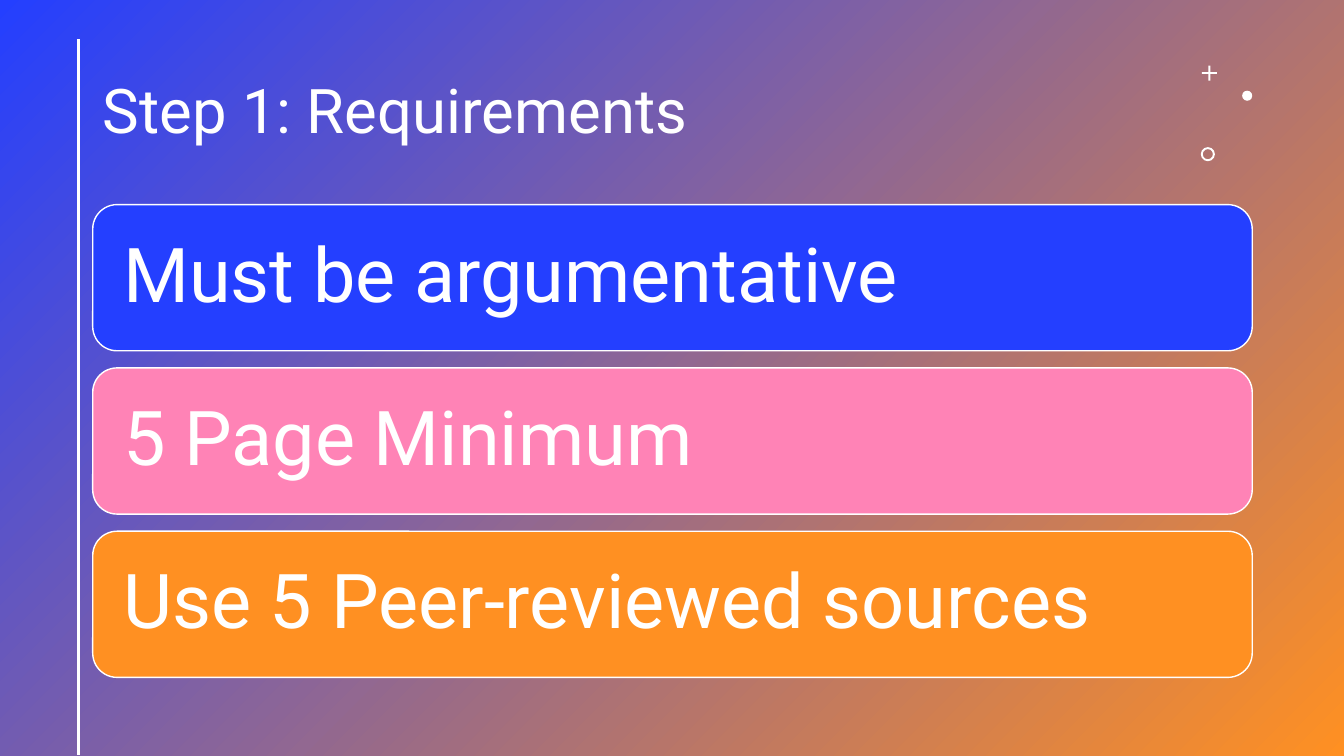
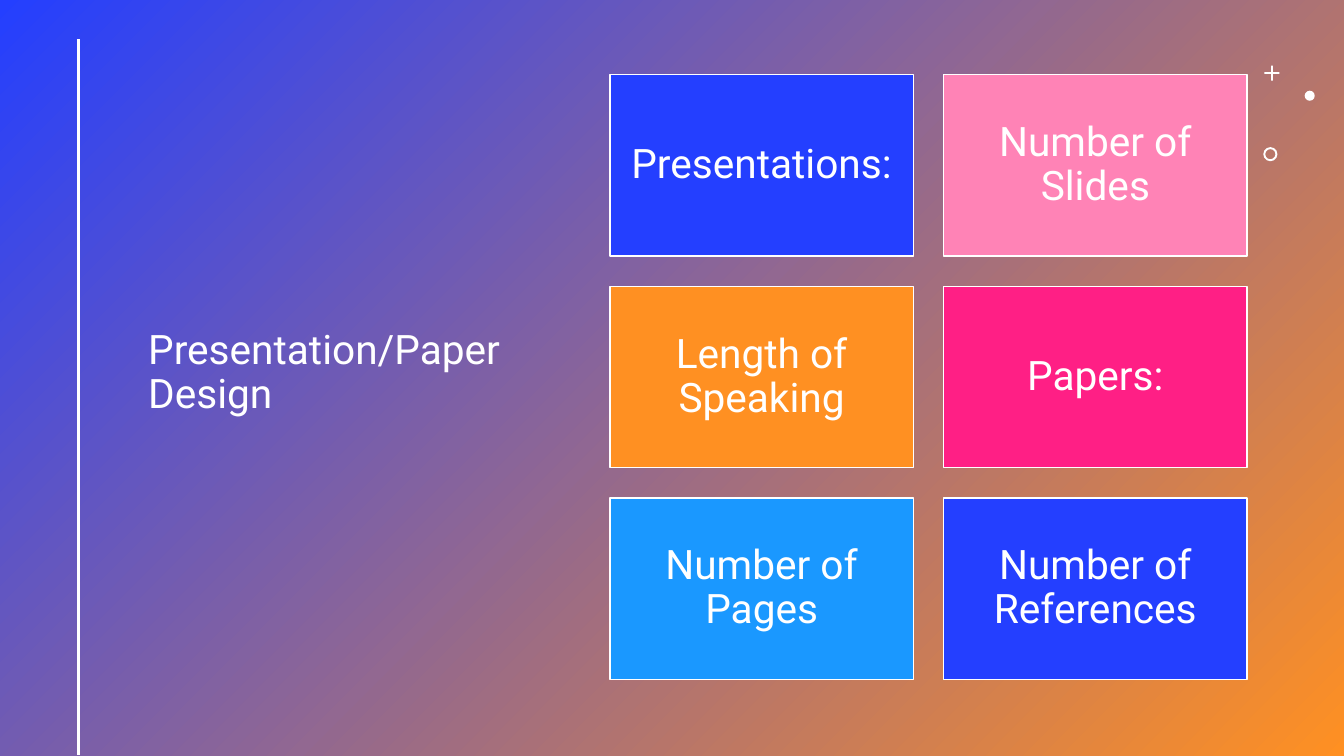
from lxml import etree
from pptx import Presentation
from pptx.dml.color import RGBColor
from pptx.enum import shapes, text
from pptx.oxml import ns
from pptx.util import Inches, Pt

FONT = "Roboto"
COLORS = {
    "white": "FFFFFF",
    "blue": "243FFF",
    "pink": "FF83B6",
    "orange": "FF9022",
    "magenta": "FF1F85",
    "sky": "1A98FF",
}
TITLE_ONLY = 5


def color(name):
    return RGBColor.from_string(COLORS[name])


def set_background(presentation):
    """Give every slide the diagonal gradient through the master."""
    fill = presentation.slide_master.background.fill
    fill.gradient()
    fill.gradient_angle = 315
    for stop, name, position in zip(fill.gradient_stops, ("blue", "orange"), (0, 1)):
        stop.color.rgb = color(name)
        stop.position = position


def write(shape, words, size, align=text.PP_ALIGN.LEFT, inset=0.1):
    frame = shape.text_frame
    frame.word_wrap = True
    frame.auto_size = text.MSO_AUTO_SIZE.NONE
    frame.vertical_anchor = text.MSO_ANCHOR.MIDDLE
    frame.margin_left = frame.margin_right = Inches(inset)
    frame.margin_top = frame.margin_bottom = Inches(min(inset, 0.05))
    paragraph = frame.paragraphs[0]
    paragraph.alignment = align
    paragraph.line_spacing = 0.9
    run = paragraph.add_run()
    run.text = words
    run.font.name = FONT
    run.font.size = Pt(size)
    run.font.color.rgb = color("white")


def add_shape(slide, kind, box, fill, outlined=False):
    shape = slide.shapes.add_shape(kind, *map(Inches, box))
    shape.shadow.inherit = False
    shape.fill.solid()
    shape.fill.fore_color.rgb = color(fill)
    if outlined:
        shape.line.color.rgb = color("white")
        shape.line.width = Pt(1)
    else:
        shape.line.fill.background()
    return shape


def add_side_line(slide):
    line = slide.shapes.add_connector(
        shapes.MSO_CONNECTOR.STRAIGHT,
        Inches(0.78), Inches(0.39), Inches(0.78), Inches(7.49))
    line.line.color.rgb = color("white")
    line.line.width = Pt(2)
    properties = line._element.spPr
    etree.SubElement(properties, ns.qn("a:effectLst"))


def add_ornaments(slide, left):
    """Plus, dot and ring in the upper right corner."""
    kinds = shapes.MSO_SHAPE
    plus = add_shape(slide, kinds.CROSS, (left + 0.01, 0.65, 0.15, 0.15), "white")
    plus.adjustments[0] = 0.44
    add_shape(slide, kinds.OVAL, (left + 0.41, 0.9, 0.1, 0.1), "white")
    ring = add_shape(slide, kinds.DONUT, (left, 1.46, 0.14, 0.14), "white")
    ring.adjustments[0] = 0.14


def add_slide(presentation, title, box, size, ornaments_left):
    slide = presentation.slides.add_slide(presentation.slide_layouts[TITLE_ONLY])
    heading = slide.shapes.title
    heading.left, heading.top, heading.width, heading.height = map(Inches, box)
    write(heading, title, size)
    add_side_line(slide)
    add_ornaments(slide, ornaments_left)
    return slide


def add_bars(slide, items):
    """Stack of full-width rounded bars."""
    for row, (words, fill) in enumerate(items):
        box = (0.92, 2.03 + row * 1.62, 11.5, 1.45)
        bar = add_shape(slide, shapes.MSO_SHAPE.ROUNDED_RECTANGLE, box, fill, True)
        write(bar, words, 54, inset=0.23)


def add_cards(slide, items, columns=2):
    """Grid of cards, filled row by row."""
    width, height, gap = 3.01, 1.8, 0.3
    for index, (words, fill) in enumerate(items):
        row, column = divmod(index, columns)
        box = (6.05 + column * (width + gap), 0.74 + row * (height + gap), width, height)
        card = add_shape(slide, shapes.MSO_SHAPE.RECTANGLE, box, fill, True)
        write(card, words, 29, text.PP_ALIGN.CENTER, inset=0.12)


def main():
    presentation = Presentation()
    presentation.slide_width = Inches(13.33)
    presentation.slide_height = Inches(7.5)
    set_background(presentation)

    # Requirements
    slide = add_slide(presentation, "Step 1: Requirements",
                      (0.92, 0.4, 10.72, 1.45), 44, ornaments_left=11.91)
    add_bars(slide, [
        ("Must be argumentative", "blue"),
        ("5 Page Minimum", "pink"),
        ("Use 5 Peer-reviewed sources", "orange"),
    ])

    # Presentation and paper design
    slide = add_slide(presentation, "Presentation/Paper Design",
                      (1.37, 0.65, 4.31, 6.11), 29, ornaments_left=12.53)
    add_cards(slide, [
        ("Presentations:", "blue"),
        ("Number of Slides", "pink"),
        ("Length of Speaking", "orange"),
        ("Papers:", "magenta"),
        ("Number of Pages", "sky"),
        ("Number of References", "blue"),
    ])

    presentation.save("out.pptx")


if __name__ == "__main__":
    main()
